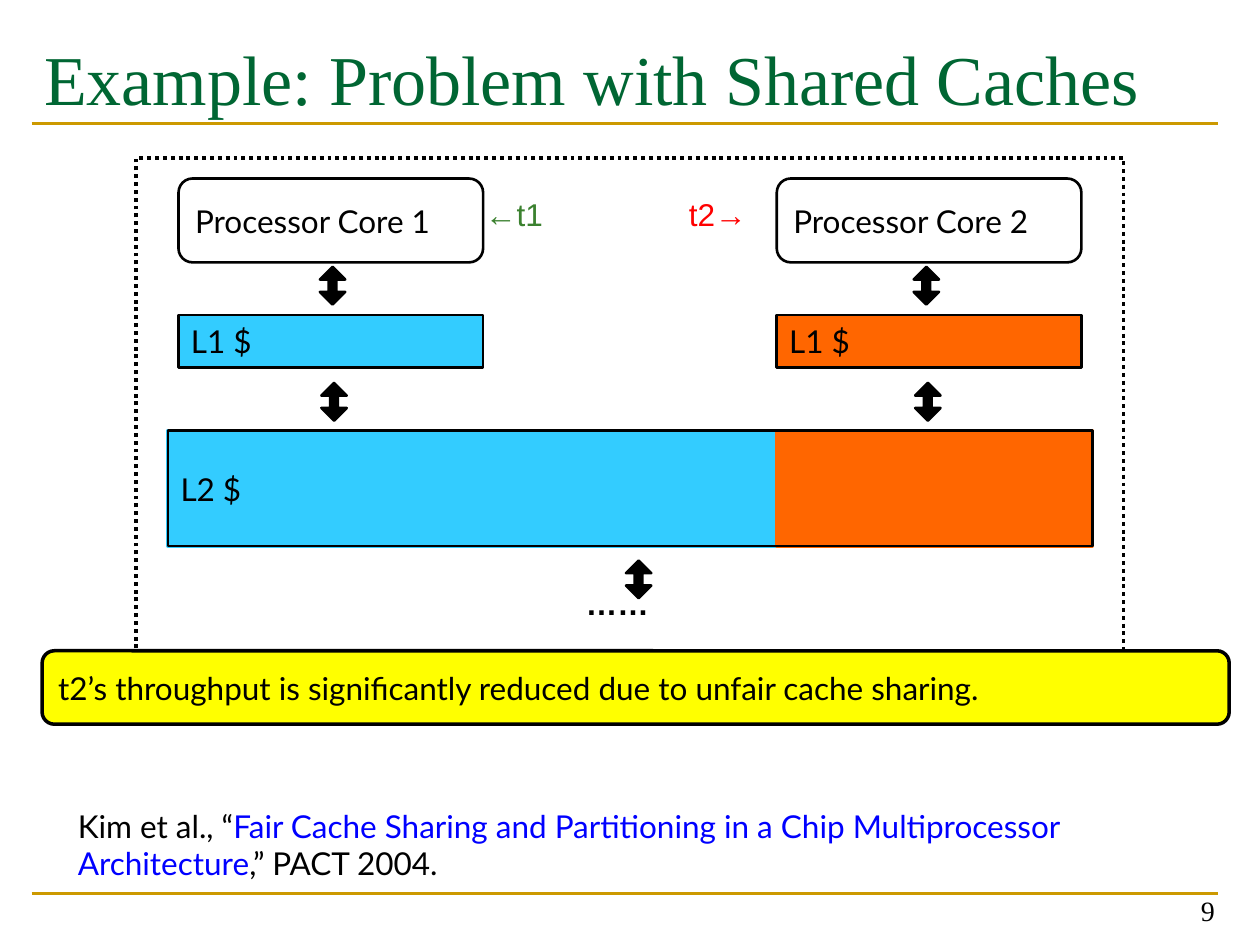
from dataclasses import dataclass
from typing import NamedTuple, Optional

from lxml.etree import SubElement
from pptx import Presentation
from pptx.dml.color import RGBColor
from pptx.enum.dml import MSO_LINE
from pptx.enum.shapes import MSO_CONNECTOR, MSO_SHAPE
from pptx.enum.text import MSO_ANCHOR, PP_ALIGN
from pptx.oxml.ns import qn
from pptx.util import Cm, Pt


@dataclass(frozen=True)
class Theme:
    black: str = "000000"
    title: str = "006633"
    rule: str = "CC9900"
    thread1: str = "3B812F"
    thread2: str = "FF0000"
    cache1: str = "33CCFF"
    cache2: str = "FF6600"
    callout: str = "FFFF00"
    citation: str = "0000FF"
    serif: str = "Times New Roman"
    label: str = "Lato"
    sans: str = "Arial"
    title_size: float = 40
    number_size: float = 16
    body_size: float = 18


class Box(NamedTuple):
    """Left, top, width and height in centimetres."""
    left: float
    top: float
    width: float
    height: float

    def lengths(self):
        return [Cm(value) for value in self]


@dataclass(frozen=True)
class Core:
    name: str
    left: float
    cache_fill: str
    arrow_left: float


THEME = Theme()
CORES = [
    Core("Processor Core 1", 3.6, THEME.cache1, 6.45),
    Core("Processor Core 2", 15.66, THEME.cache2, 18.42),
]
CORE_WIDTH = 6.14
L2_LEFT, L2_TOP, L2_HEIGHT = 3.39, 8.68, 2.33
L2_SPLIT, L2_RIGHT = 15.66, 22.02


def write(frame, *parts, font=THEME.label, size=THEME.body_size,
          color=THEME.black, bold=False, align=PP_ALIGN.LEFT,
          anchor=MSO_ANCHOR.TOP, indent=0.0, top_inset=0.13) -> None:
    """Fill a text frame; a part is a string or a (string, color) pair."""
    frame.word_wrap = True
    frame.vertical_anchor = anchor
    frame.margin_top = Cm(top_inset)
    paragraph = frame.paragraphs[0]
    paragraph.alignment = align
    if indent:
        paragraph._p.get_or_add_pPr().set("marL", str(Cm(indent)))
    for part in parts:
        text, part_color = (part, color) if isinstance(part, str) else part
        run = paragraph.add_run()
        run.text = text
        run.font.name = font
        run.font.size = Pt(size)
        run.font.bold = bold
        run.font.color.rgb = RGBColor.from_string(part_color)


def add_text(slide, box: Box, *parts, **text_format) -> None:
    write(slide.shapes.add_textbox(*box.lengths()).text_frame,
          *parts, **text_format)


def add_block(slide, box: Box, label: str = "", kind=MSO_SHAPE.RECTANGLE,
              fill: Optional[str] = None, line: str = THEME.black,
              weight: float = 1.5, dash=None, adjustments=()) -> None:
    block = slide.shapes.add_shape(kind, *box.lengths())
    block.shadow.inherit = False
    for index, value in enumerate(adjustments):
        block.adjustments[index] = value
    if fill:
        block.fill.solid()
        block.fill.fore_color.rgb = RGBColor.from_string(fill)
    else:
        block.fill.background()
    block.line.color.rgb = RGBColor.from_string(line)
    block.line.width = Pt(weight)
    if dash:
        block.line.dash_style = dash
    if label:
        write(block.text_frame, label, anchor=MSO_ANCHOR.MIDDLE)


def add_transfer_arrow(slide, left: float, top: float) -> None:
    add_block(slide, Box(left, top, 0.51, 0.76),
              kind=MSO_SHAPE.UP_DOWN_ARROW, fill=THEME.black,
              adjustments=(0.5, 0.3))


def add_rule(slide, top: float) -> None:
    rule = slide.shapes.add_connector(
        MSO_CONNECTOR.STRAIGHT, Cm(0.64), Cm(top), Cm(24.56), Cm(top))
    rule.line.color.rgb = RGBColor.from_string(THEME.rule)
    rule.line.width = Pt(1.5)
    SubElement(rule._element.spPr, qn("a:effectLst"))


def add_core(slide, core: Core) -> None:
    """Draw a core, its private cache and the arrows down to the L2 cache."""
    add_block(slide, Box(core.left, 3.6, CORE_WIDTH, 1.69), core.name,
              kind=MSO_SHAPE.ROUNDED_RECTANGLE)
    add_block(slide, Box(core.left, 6.35, CORE_WIDTH, 1.06), "L1 $",
              fill=core.cache_fill)
    add_transfer_arrow(slide, core.arrow_left, 5.38)
    add_transfer_arrow(slide, core.arrow_left + 0.03, 7.72)


def add_shared_cache(slide) -> None:
    for left, right, fill in [(L2_LEFT, L2_SPLIT, THEME.cache1),
                              (L2_SPLIT, L2_RIGHT, THEME.cache2)]:
        add_block(slide, Box(left, L2_TOP, right - left, L2_HEIGHT),
                  fill=fill, line=fill, weight=2)
    add_block(slide, Box(L2_LEFT, L2_TOP, L2_RIGHT - L2_LEFT, L2_HEIGHT),
              "L2 $")


def main() -> None:
    deck = Presentation()
    deck.slide_width, deck.slide_height = Cm(25.4), Cm(19.05)
    slide = deck.slides.add_slide(deck.slide_layouts[6])

    for rule_top in (18.01, 2.49):
        add_rule(slide, rule_top)
    add_text(slide, Box(0.64, 0.43, 23.93, 2.97),
             "Example: Problem with Shared Caches", font=THEME.serif,
             size=THEME.title_size, color=THEME.title, top_inset=0.28)
    add_text(slide, Box(18.82, 17.55, 5.92, 1.27), "9", font=THEME.serif,
             size=THEME.number_size, align=PP_ALIGN.RIGHT,
             anchor=MSO_ANCHOR.BOTTOM)

    add_shared_cache(slide)
    add_text(slide, Box(11.56, 11.64, 2.62, 1.27), "……", font=THEME.sans,
             bold=True)
    add_block(slide, Box(2.75, 3.18, 19.9, 10.37), weight=2.25,
              dash=MSO_LINE.ROUND_DOT)
    for core in CORES:
        add_core(slide, core)
    add_transfer_arrow(slide, 12.62, 11.3)
    for left, thread, color in [(9.53, "←t1", THEME.thread1),
                                (13.64, "t2→", THEME.thread2)]:
        add_text(slide, Box(left, 3.81, 2.22, 1.27), thread,
                 font=THEME.sans, color=color)

    add_block(slide, Box(0.85, 13.12, 23.93, 1.48),
              "t2’s throughput is significantly reduced due to unfair "
              "cache sharing.", kind=MSO_SHAPE.ROUNDED_RECTANGLE,
              fill=THEME.callout, weight=2)
    add_text(slide, Box(0.05, 16.13, 24.44, 1.8), "Kim et al., “",
             ("Fair Cache Sharing and Partitioning in a Chip Multiprocessor "
              "Architecture", THEME.citation), ",” PACT 2004.", indent=1.27)

    deck.save("out.pptx")


if __name__ == "__main__":
    main()
